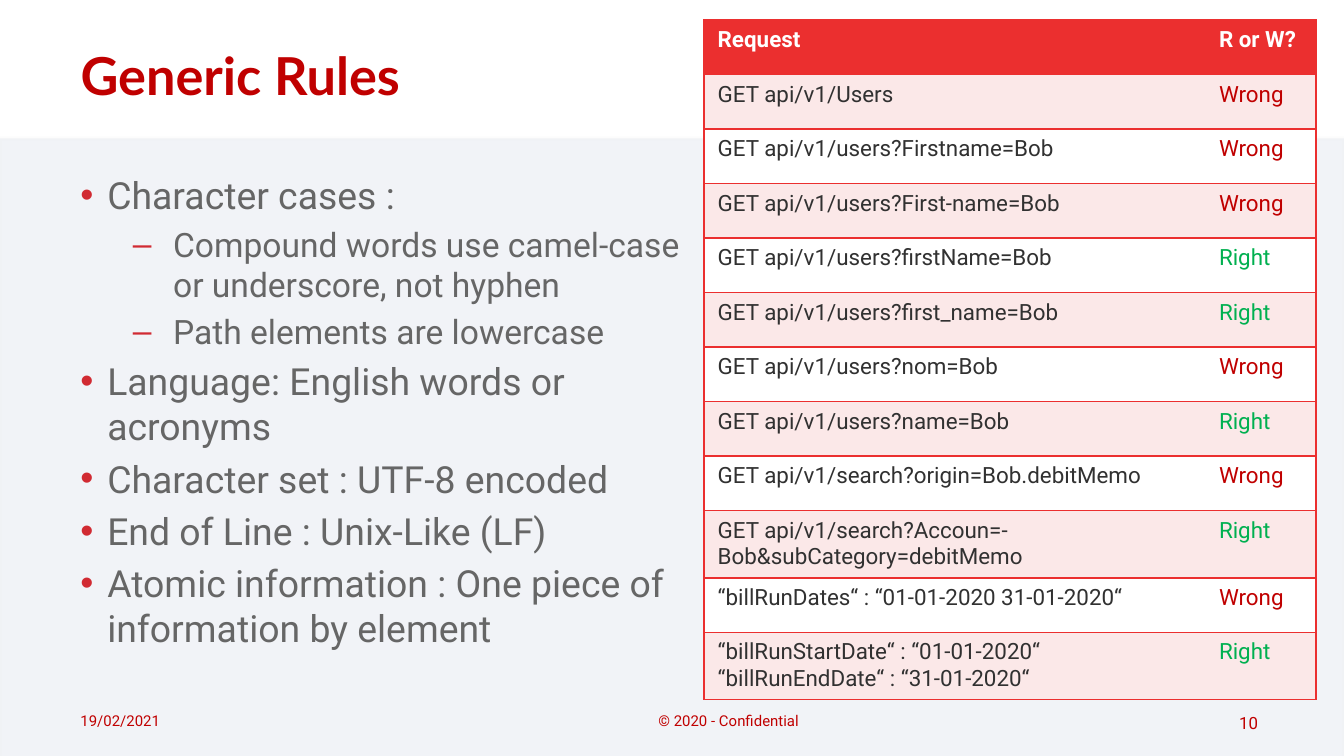
from lxml.etree import SubElement
from pptx import Presentation
from pptx.dml.color import RGBColor
from pptx.enum.shapes import MSO_SHAPE
from pptx.enum.text import MSO_ANCHOR, PP_ALIGN
from pptx.oxml.ns import qn
from pptx.util import Inches, Pt

RED, ACCENT, GREEN = "C00000", "EB2F2F", "00B050"
NO_STYLE = "{2D5ABB26-0587-4C30-8999-92F81FD0307C}"

RULES = [
    (0, "Character cases :"),
    (1, "Compound words use camel-case or underscore, not hyphen"),
    (1, "Path elements are lowercase"),
    (0, "Language: English words or acronyms"),
    (0, "Character set : UTF-8 encoded"),
    (0, "End of Line : Unix-Like (LF)"),
    (0, "Atomic information : One piece of information by element"),
]
LEVELS = [("•", 0.2, -0.2, 20), ("–", 0.69, -0.3, 18)]

REQUESTS = [
    ("GET api/v1/Users", "Wrong"),
    ("GET api/v1/users?Firstname=Bob", "Wrong"),
    ("GET api/v1/users?First-name=Bob", "Wrong"),
    ("GET api/v1/users?firstName=Bob", "Right"),
    ("GET api/v1/users?first_name=Bob", "Right"),
    ("GET api/v1/users?nom=Bob", "Wrong"),
    ("GET api/v1/users?name=Bob", "Right"),
    ("GET api/v1/search?origin=Bob.debitMemo", "Wrong"),
    ("GET api/v1/search?Accoun=-Bob&subCategory=debitMemo", "Right"),
    ("“billRunDates“ : “01-01-2020 31-01-2020“", "Wrong"),
    ("“billRunStartDate“ : “01-01-2020“\n“billRunEndDate“ : “31-01-2020“", "Right"),
]


def color(value):
    """Turn a hex string into a colour."""
    return RGBColor.from_string(value)


def style(paragraph, size, value, name="Roboto", bold=False):
    """Set the font of a whole paragraph."""
    font = paragraph.font
    font.name, font.size, font.bold = name, Pt(size), bold
    font.color.rgb = color(value)


def indent(paragraph, margin, first=0):
    """Set the left margin and first-line indent, and return the properties."""
    properties = paragraph._p.get_or_add_pPr()
    properties.set("marL", str(Inches(margin)))
    properties.set("indent", str(Inches(first)))
    return properties


def add_panel(slide):
    """Add the pale panel below the title."""
    panel = slide.shapes.add_shape(
        MSO_SHAPE.RECTANGLE, Inches(0), Inches(1.03), Inches(10), Inches(4.63))
    panel.shadow.inherit = False
    panel.fill.solid()
    panel.fill.fore_color.rgb = color("7B8DB3")
    panel.line.color.rgb = color("EBEBEB")
    panel.line.width = Pt(2)
    for tint in panel._element.spPr.iter(qn("a:srgbClr")):
        SubElement(tint, qn("a:alpha"), val="10000")


def add_title(slide, text):
    """Place and format the title."""
    title = slide.shapes.title
    title.left, title.top = Inches(0.5), Inches(0.1)
    title.width, title.height = Inches(9), Inches(0.91)
    title.text_frame.text = text
    title.text_frame.vertical_anchor = MSO_ANCHOR.MIDDLE
    heading = title.text_frame.paragraphs[0]
    heading.alignment = PP_ALIGN.LEFT
    style(heading, 28, RED, "Lato", True)


def add_rules(slide):
    """Add the two-level list of rules."""
    frame = slide.shapes.add_textbox(
        Inches(0.5), Inches(1.23), Inches(4.74), Inches(3.88)).text_frame
    frame.word_wrap = True
    for number, (level, text) in enumerate(RULES):
        rule = frame.add_paragraph() if number else frame.paragraphs[0]
        bullet, margin, first, size = LEVELS[level]
        rule.text = text
        rule.level = level
        rule.space_before = Pt(size * 0.2 if number else 0)
        properties = indent(rule, margin, first)
        bullet_color = SubElement(properties, qn("a:buClr"))
        SubElement(bullet_color, qn("a:srgbClr"), val="D12A32")
        SubElement(properties, qn("a:buFont"), typeface="Arial")
        SubElement(properties, qn("a:buChar"), char=bullet)
        style(rule, size, "666666")


def add_footer(slide, text, left, top, width, height, size=8, margin=0,
               align=PP_ALIGN.LEFT, wrap=True):
    """Add one footer text."""
    frame = slide.shapes.add_textbox(
        Inches(left), Inches(top), Inches(width), Inches(height)).text_frame
    frame.word_wrap = wrap
    frame.vertical_anchor = MSO_ANCHOR.MIDDLE
    frame.text = text
    footer = frame.paragraphs[0]
    footer.alignment = align
    indent(footer, margin)
    style(footer, size, RED)


def fill_cell(cell, text, value, background, sides, bold):
    """Write a cell with its borders and fill."""
    cell.text = text
    for paragraph in cell.text_frame.paragraphs:
        style(paragraph, 12, value, bold=bold)
    properties = cell._tc.get_or_add_tcPr()
    for side in sides:
        border = SubElement(properties, qn(f"a:ln{side}"), w=str(Pt(1)))
        SubElement(SubElement(border, qn("a:solidFill")), qn("a:srgbClr"), val=ACCENT)
    cell.fill.solid()
    cell.fill.fore_color.rgb = color(background)


def add_requests(slide):
    """Add the table of right and wrong requests."""
    rows = [("Request", "R or W?")] + REQUESTS
    table = slide.shapes.add_table(
        len(rows), 2, Inches(5.24), Inches(0.15), Inches(4.55), Inches(4.87)).table
    table._tbl.tblPr.find(qn("a:tableStyleId")).text = NO_STYLE
    for column, width in zip(table.columns, (3.73, 0.82)):
        column.width = Inches(width)
    verdict_colors = {"Wrong": RED, "Right": GREEN}
    for number, (request, verdict) in enumerate(rows):
        header = number == 0
        background = ACCENT if header else ("FFFFFF", "FBE8E8")[number % 2]
        request_color = "FFFFFF" if header else "313131"
        verdict_color = verdict_colors.get(verdict, "FFFFFF")
        fill_cell(table.cell(number, 0), request, request_color, background, "LTB", header)
        fill_cell(table.cell(number, 1), verdict, verdict_color, background, "RTB", header)


def main():
    """Build the slide and save it."""
    deck = Presentation()
    deck.slide_width, deck.slide_height = Inches(10), Inches(10 * 9 / 16)
    slide = deck.slides.add_slide(deck.slide_layouts[5])
    add_panel(slide)
    add_footer(slide, "10", 9.08, 5.25, 0.42, 0.25, size=9,
               align=PP_ALIGN.CENTER, wrap=False)
    add_title(slide, "Generic Rules")
    add_footer(slide, "19/02/2021", 0.5, 5.21, 2.33, 0.3)
    add_rules(slide)
    add_footer(slide, "© 2020 - Confidential", 3.42, 5.21, 3.17, 0.3, margin=1.38)
    add_requests(slide)
    deck.save("out.pptx")


if __name__ == "__main__":
    main()
